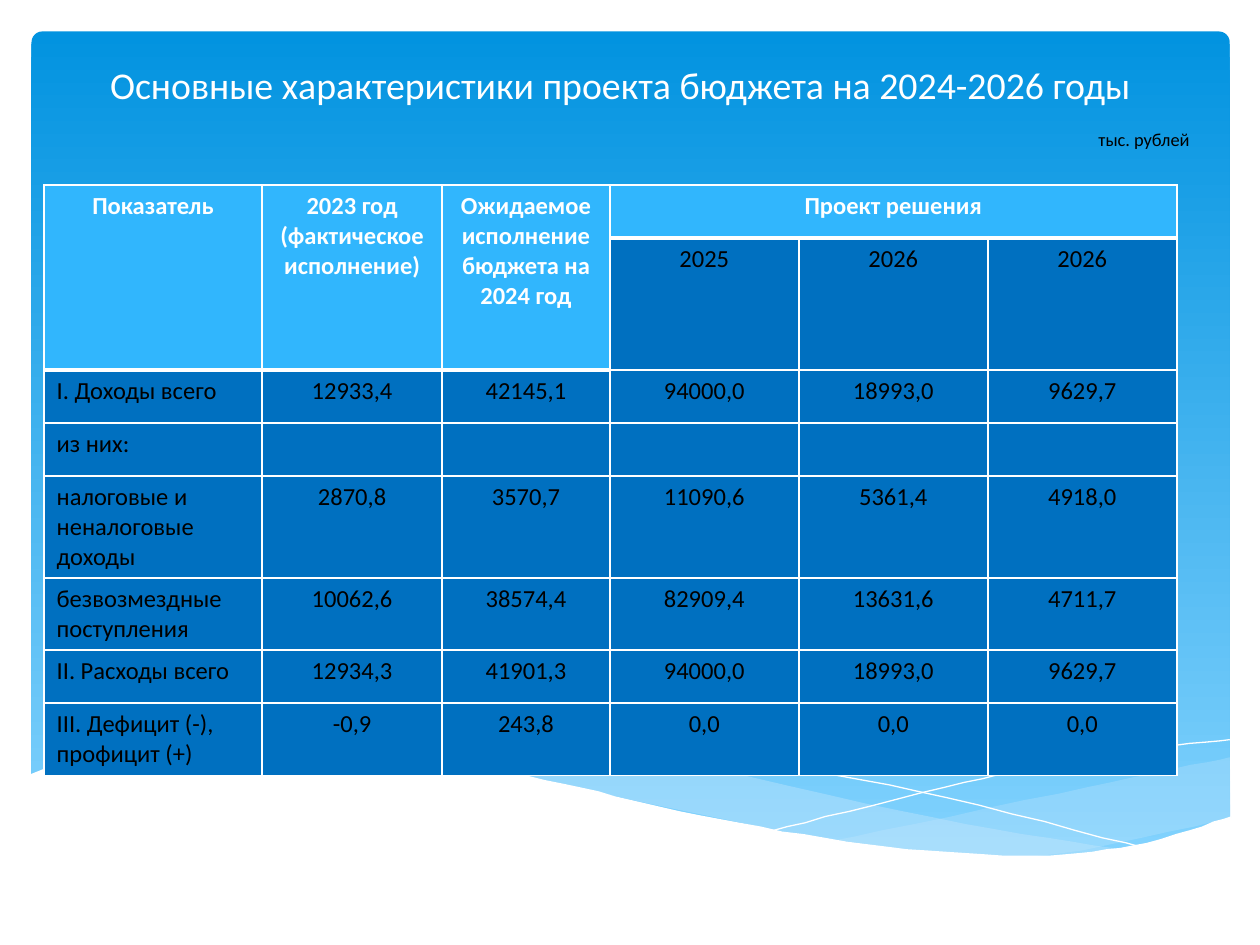
from dataclasses import dataclass
from typing import Optional

from lxml.etree import SubElement
from pptx import Presentation
from pptx.dml.color import RGBColor
from pptx.enum.shapes import MSO_SHAPE as Preset
from pptx.enum.text import MSO_ANCHOR as Anchor, PP_ALIGN as Align
from pptx.oxml.ns import qn
from pptx.util import Emu, Pt

EMU_PER_PX = 9144
CURVE_STEPS = 8
FONT = "Calibri"
WHITE = RGBColor(0xFF, 0xFF, 0xFF)
BLACK = RGBColor(0x00, 0x00, 0x00)
SKY_TOP = RGBColor(0x02, 0x93, 0xE0)
SKY_BOTTOM = RGBColor(0x83, 0xD3, 0xFE)
WAVE_BLUE = RGBColor(0xC6, 0xE7, 0xFC)
HEADER_BLUE = RGBColor(0x31, 0xB6, 0xFD)
BODY_BLUE = RGBColor(0x00, 0x70, 0xC0)


@dataclass(frozen=True)
class Box:
    left: int
    top: int
    width: int
    height: int

    def emu(self) -> tuple:
        return tuple(px(v) for v in (self.left, self.top, self.width, self.height))


@dataclass(frozen=True)
class Wave:
    edges: tuple
    fill: Optional[RGBColor] = None
    opacity: int = 100


@dataclass(frozen=True)
class Label:
    box: Box
    text: str
    size: float
    color: RGBColor
    align: Align
    anchor: Anchor


WAVES = (
    Wave((((976, 601), (862, 625), (662, 667)),
          ((662, 667), (815, 680), (977, 649))), WAVE_BLUE, 29),
    Wave((((894, 675), (742, 649), (515, 600), (380, 587), (287, 593)),
          ((287, 593), (450, 624), (666, 668), (808, 680), (894, 675))), WAVE_BLUE, 40),
    Wave((((310, 597), (417, 589), (557, 598), (728, 628), (908, 673)),)),
    Wave((((614, 659), (749, 625), (867, 600), (976, 587)),)),
    Wave((((977, 648), (899, 671), (809, 679), (688, 670), (555, 647), (447, 622),
           (316, 596), (177, 586), (85, 595), (23, 615)),
          ((23, 731), (977, 731))), WHITE),
)

LABELS = (
    Label(Box(20, 36, 945, 54), "Основные характеристики проекта бюджета на 2024-2026 годы",
          21.6, WHITE, Align.CENTER, Anchor.BOTTOM),
    Label(Box(862, 97, 126, 28), "тыс. рублей", 10.5, BLACK, Align.LEFT, Anchor.TOP),
)

TABLE_LEFT, TABLE_TOP, ROW_HEIGHT = 35, 147, 42
COLUMN_WIDTHS = (173, 143, 133, 150, 150, 150)
HEADER_ROWS, TALL_HEADERS = 2, 3
BUDGET = (
    ("Показатель", "2023 год (фактическое исполнение)",
     "Ожидаемое исполнение бюджета на 2024 год", "Проект решения", "", ""),
    ("", "", "", "2025", "2026", "2026"),
    ("I. Доходы всего", "12933,4", "42145,1", "94000,0", "18993,0", "9629,7"),
    ("из них:", "", "", "", "", ""),
    ("налоговые и неналоговые доходы", "2870,8", "3570,7", "11090,6", "5361,4", "4918,0"),
    ("безвозмездные поступления", "10062,6", "38574,4", "82909,4", "13631,6", "4711,7"),
    ("II. Расходы всего", "12934,3", "41901,3", "94000,0", "18993,0", "9629,7"),
    ("III. Дефицит (-), профицит (+)", "-0,9", "243,8", "0,0", "0,0", "0,0"),
)


def px(length: int) -> Emu:
    return Emu(length * EMU_PER_PX)


def format_runs(paragraph, size: float, color: RGBColor, bold: bool = False) -> None:
    for run in paragraph.runs:
        run.font.name = FONT
        run.font.size = Pt(size)
        run.font.bold = bold
        run.font.color.rgb = color


def draw_sky(shapes) -> None:
    sky = shapes.add_shape(Preset.ROUNDED_RECTANGLE, *Box(25, 25, 951, 660).emu())
    sky.adjustments[0] = 0.013
    sky.shadow.inherit = False
    sky.line.fill.background()
    sky.fill.gradient()
    sky.fill.gradient_angle = 270
    for stop, position, color in zip(sky.fill.gradient_stops, (0, 1), (SKY_TOP, SKY_BOTTOM)):
        stop.position = position
        stop.color.rgb = color


def smooth(knots: tuple) -> list:
    curve = [knots[0]]
    if len(knots) == 2:
        return list(knots)
    padded = (knots[0], *knots, knots[-1])
    for before, start, end, after in zip(padded, padded[1:], padded[2:], padded[3:]):
        for step in range(1, CURVE_STEPS + 1):
            t = step / CURVE_STEPS
            curve.append(tuple(
                b + ((c - a) * t + (2 * a - 5 * b + 4 * c - d) * t ** 2
                     + (3 * b - a - 3 * c + d) * t ** 3) / 2
                for a, b, c, d in zip(before, start, end, after)))
    return curve


def draw_wave(shapes, wave: Wave) -> None:
    closed = wave.fill is not None
    points = [point for edge in wave.edges for point in smooth(edge)]
    builder = shapes.build_freeform(*points[0], scale=EMU_PER_PX)
    builder.add_line_segments(points[1:], close=closed)
    crest = builder.convert_to_shape()
    crest.shadow.inherit = False
    if not closed:
        crest.fill.background()
        crest.line.color.rgb = WHITE
        crest.line.width = Pt(0)
        return
    crest.line.fill.background()
    crest.fill.solid()
    crest.fill.fore_color.rgb = wave.fill
    if wave.opacity < 100:
        tint = crest.element.spPr.find(qn("a:solidFill"))[0]
        SubElement(tint, qn("a:alpha"), val=str(wave.opacity * 1000))


def draw_label(shapes, label: Label) -> None:
    frame = shapes.add_textbox(*label.box.emu()).text_frame
    frame.word_wrap = True
    frame.vertical_anchor = label.anchor
    frame.text = label.text
    frame.paragraphs[0].alignment = label.align
    format_runs(frame.paragraphs[0], label.size, label.color)


def is_header(row: int, column: int) -> bool:
    return row == 0 or (row < HEADER_ROWS and column < TALL_HEADERS)


def draw_border(cell, side: str, width: int) -> None:
    border = SubElement(cell._tc.get_or_add_tcPr(), qn(f"a:ln{side}"), w=str(Pt(width)))
    SubElement(SubElement(border, qn("a:solidFill")), qn("a:srgbClr"), val=str(WHITE))


def draw_cell(cell, row: int, column: int, text: str) -> None:
    header = is_header(row, column)
    ends_header = header and not is_header(row + 1, column)
    follows_header = not header and is_header(row - 1, column)
    for side, thick in (("L", False), ("R", False), ("T", follows_header), ("B", ends_header)):
        draw_border(cell, side, 3 if thick else 1)
    cell.fill.solid()
    cell.fill.fore_color.rgb = HEADER_BLUE if header else BODY_BLUE
    cell.text_frame.text = text
    paragraph = cell.text_frame.paragraphs[0]
    paragraph.alignment = Align.CENTER if header or column else Align.LEFT
    format_runs(paragraph, 14, WHITE if header else BLACK, header)


def draw_budget(shapes) -> None:
    box = Box(TABLE_LEFT, TABLE_TOP, sum(COLUMN_WIDTHS), ROW_HEIGHT * len(BUDGET))
    table = shapes.add_table(len(BUDGET), len(COLUMN_WIDTHS), *box.emu()).table
    for column, width in zip(table.columns, COLUMN_WIDTHS):
        column.width = px(width)
    for row, texts in enumerate(BUDGET):
        for column, text in enumerate(texts):
            draw_cell(table.cell(row, column), row, column, text)
    for column in range(TALL_HEADERS):
        table.cell(0, column).merge(table.cell(HEADER_ROWS - 1, column))
    table.cell(0, TALL_HEADERS).merge(table.cell(0, len(COLUMN_WIDTHS) - 1))


def main() -> None:
    deck = Presentation()
    deck.slide_width, deck.slide_height = px(1000), px(750)
    shapes = deck.slides.add_slide(deck.slide_layouts[6]).shapes
    draw_sky(shapes)
    for wave in WAVES:
        draw_wave(shapes, wave)
    draw_budget(shapes)
    for label in LABELS:
        draw_label(shapes, label)
    deck.save("out.pptx")


if __name__ == "__main__":
    main()
